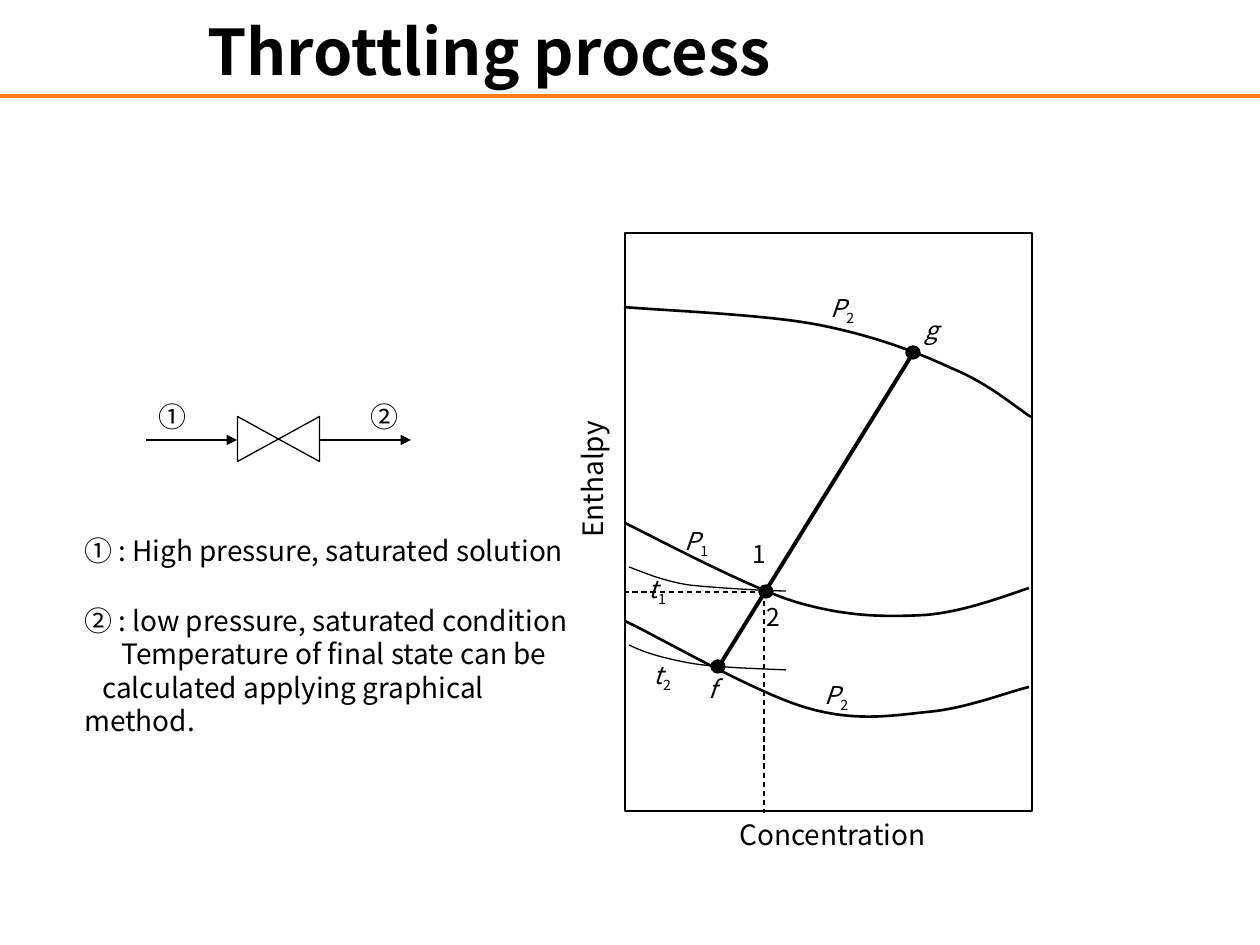
from lxml.etree import SubElement
from pptx import Presentation
from pptx.dml.color import RGBColor
from pptx.enum.dml import MSO_LINE
from pptx.enum.shapes import MSO_CONNECTOR, MSO_SHAPE
from pptx.enum.text import MSO_ANCHOR, PP_ALIGN
from pptx.oxml.ns import qn
from pptx.util import Pt

EMU_PER_PX = 914400 / 126
FONT = "Noto Sans CJK KR"
BLACK = "000000"


def px(length):
    return round(length * EMU_PER_PX)


def colour(hex_string):
    return RGBColor.from_string(hex_string)


def style_line(shape, width, hex_string=BLACK):
    shape.line.color.rgb = colour(hex_string)
    shape.line.width = Pt(width)


def add_text(page, box, paragraphs, size=16, bold=False, align=PP_ALIGN.CENTER,
             anchor=MSO_ANCHOR.TOP, wrap=True, rotation=0, spacing=None):
    """Each paragraph is (spans, left margin, first-line indent);
    each span is (text, italic, subscript)."""
    shape = page.shapes.add_textbox(*map(px, box))
    shape.rotation = rotation
    frame = shape.text_frame
    frame.word_wrap = wrap
    frame.vertical_anchor = anchor
    for index, (spans, margin, indent) in enumerate(paragraphs):
        para = frame.add_paragraph() if index else frame.paragraphs[0]
        para.alignment = align
        if spacing:
            para.line_spacing = spacing
        properties = para._p.get_or_add_pPr()
        properties.set("marL", str(px(margin)))
        properties.set("indent", str(px(indent)))
        for text, italic, subscript in spans:
            span = para.add_run()
            span.text = text
            font = span.font
            font.name, font.size = FONT, Pt(size)
            font.bold, font.italic = bold, italic
            font.color.rgb = colour(BLACK)
            run_properties = span._r.get_or_add_rPr()
            SubElement(run_properties, qn("a:ea")).set("typeface", FONT)
            if subscript:
                run_properties.set("baseline", "-25000")
    return shape


def plain(text, margin=0, indent=0):
    return [(text, False, False)], margin, indent


def add_line(page, start, end, width, hex_string=BLACK, arrow=False, dashed=False):
    line = page.shapes.add_connector(MSO_CONNECTOR.STRAIGHT, *map(px, start + end))
    style_line(line, width, hex_string)
    if dashed:
        line.line.dash_style = MSO_LINE.DASH
    if arrow:
        SubElement(line.line._get_or_add_ln(), qn("a:tailEnd")).set("type", "triangle")
    SubElement(line.element.spPr, qn("a:effectLst"))


def add_shape(page, kind, box, fill=None, rotation=0):
    shape = page.shapes.add_shape(kind, *map(px, box))
    shape.shadow.inherit = False
    shape.rotation = rotation
    if fill:
        shape.fill.solid()
        shape.fill.fore_color.rgb = colour(fill)
    else:
        shape.fill.background()
    style_line(shape, 0.75)


def add_curve(page, points, width):
    """Draw a start point followed by triples of Bezier points."""
    builder = page.shapes.build_freeform(*points[0], scale=EMU_PER_PX)
    builder.add_line_segments(points[1:], close=False)
    curve = builder.convert_to_shape()
    curve.shadow.inherit = False
    curve.fill.background()
    style_line(curve, width)
    # Join every three straight segments into one cubic segment
    outline = curve.element.find(".//" + qn("a:path"))
    segments = outline.findall(qn("a:lnTo"))
    for first in range(0, len(segments), 3):
        cubic = SubElement(outline, qn("a:cubicBezTo"))
        for segment in segments[first:first + 3]:
            cubic.append(segment[0])
            outline.remove(segment)


def add_header(page, left, top, width, height):
    add_line(page, (left, top + 96), (left + width, top + 96), 2, "FF7F00")
    add_text(page, (left, top, 978, height), [plain("Throttling process")],
             size=36, bold=True, anchor=MSO_ANCHOR.MIDDLE)


def add_valve(page, left, top):
    add_shape(page, MSO_SHAPE.FLOWCHART_COLLATE, (left + 110, top + 5, 45, 82), rotation=270)
    for number, line_x, label_x in (("①", 0, 0), ("②", 174, 212)):
        start = left + line_x
        add_line(page, (start, top + 47), (start + 91, top + 47), 1.5, arrow=True)
        add_text(page, (left + label_x, top, 53, 47), [plain(number)], wrap=False)


def add_notes(page, left, top, width):
    add_text(page, (left, top, width, 47),
             [plain("① : High pressure, saturated solution")], align=PP_ALIGN.LEFT)
    add_text(page, (left, top + 70, width, 115),
             [plain("② : low pressure, saturated condition"),
              plain("Temperature of final state can be", margin=37),
              plain("calculated applying graphical method.", indent=18)],
             align=PP_ALIGN.LEFT)


def add_diagram(page, left, top, width, height):
    def at(x, y):
        return left + x, top + y

    add_shape(page, MSO_SHAPE.RECTANGLE, (left, top, width, height))

    # Pressure and temperature curves
    curves = (
        (1.5, [(0, 290), (29, 304), (122, 354), (171, 369), (222, 384), (261, 384),
               (300, 382), (339, 379), (383, 362), (404, 355)]),
        (1.5, [(-1, 74), (30, 77), (134, 81), (189, 91), (243, 101), (290, 118),
               (326, 135), (363, 150), (389, 173), (406, 184)]),
        (1.5, [(0, 388), (30, 402), (129, 459), (179, 474), (228, 489), (265, 483),
               (302, 479), (340, 476), (383, 459), (404, 454)]),
        (0.75, [(4, 334), (20, 340), (38, 348), (64, 352), (91, 355), (144, 358), (161, 358)]),
        (0.75, [(4, 412), (20, 420), (38, 425), (64, 430), (91, 435), (144, 436), (161, 437)]),
    )
    for line_width, points in curves:
        add_curve(page, [at(*point) for point in points], line_width)

    # Tie line, state points and guides
    add_line(page, at(285, 125), at(96, 430), 2.25)
    for x, y in ((134, 352), (86, 427), (281, 113)):
        add_shape(page, MSO_SHAPE.FLOWCHART_CONNECTOR, (*at(x, y), 14, 13), fill=BLACK)
    for end in ((139, 580), (0, 359)):
        add_line(page, at(139, 359), at(*end), 0.75, dashed=True)

    # Labels: symbol, subscript, position
    labels = (("1", "", 106, 300), ("2", "", 120, 363), ("f", "", 59, 435),
              ("g", "", 278, 76), ("P", "1", 43, 287), ("P", "2", 189, 54),
              ("P", "2", 183, 441), ("t", "1", 4, 335), ("t", "2", 9, 421))
    for symbol, subscript, x, y in labels:
        spans = [(symbol, symbol.isalpha(), False)]
        if subscript:
            spans.append((subscript, False, True))
        add_text(page, (*at(x, y), 57, 42), [(spans, 0, 0)], size=14)

    # Axis titles
    add_text(page, (*at(-9, height), 433, 47), [plain("Concentration")])
    add_text(page, (*at(-249, 223), 433, 47), [plain("Enthalpy")], rotation=270)


def main():
    deck = Presentation()
    deck.slide_width, deck.slide_height = px(1260), px(945)
    page = deck.slides.add_slide(deck.slide_layouts[6])
    add_header(page, 0, 0, 1260, 100)
    add_valve(page, 146, 393)
    add_diagram(page, 625, 233, 407, 578)
    add_notes(page, 72, 527, 510)
    deck.save("out.pptx")


if __name__ == "__main__":
    main()
